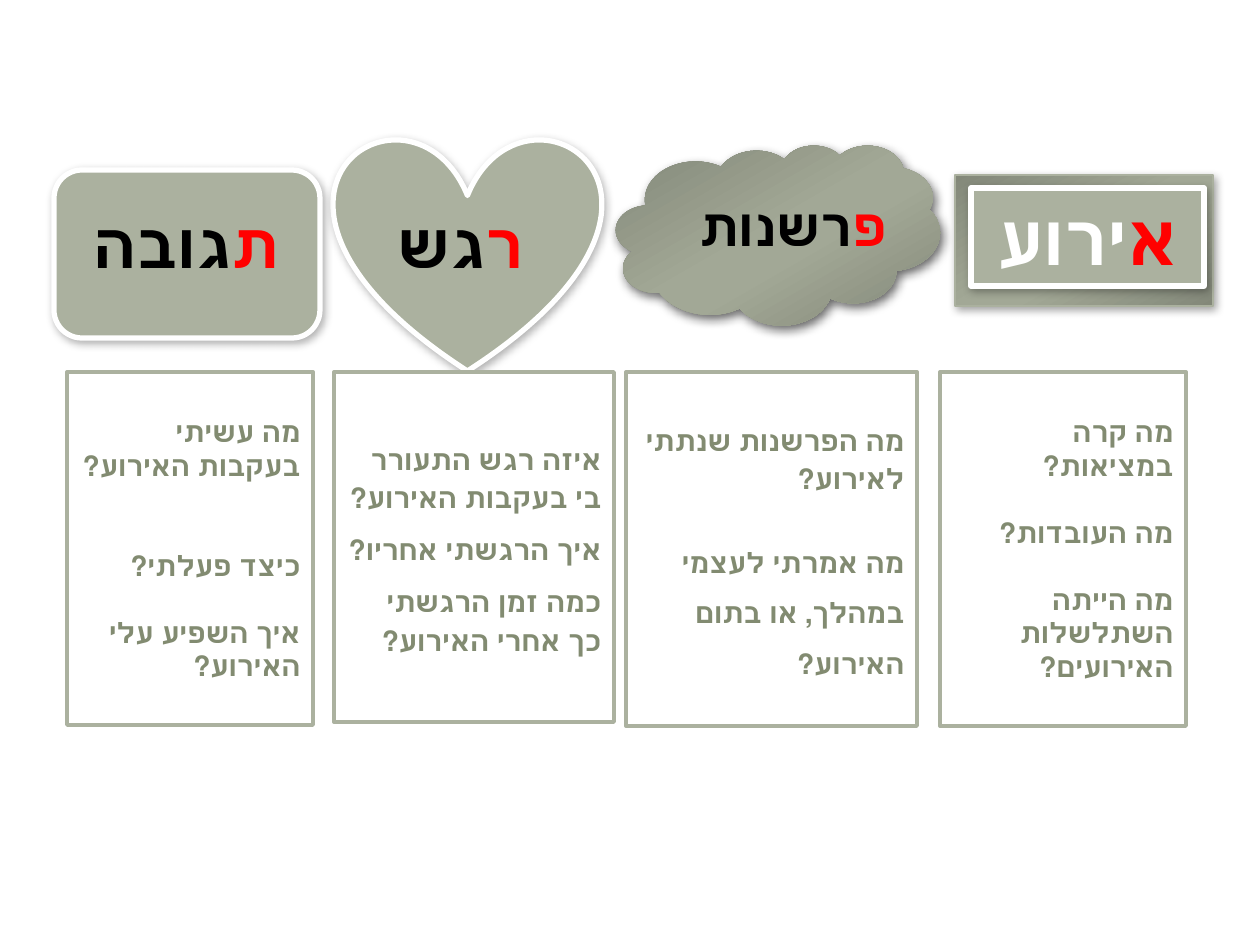
from lxml.etree import SubElement
from pptx import Presentation
from pptx.dml.color import RGBColor
from pptx.enum.shapes import MSO_SHAPE as SHAPE
from pptx.enum.text import MSO_ANCHOR as ANCHOR, PP_ALIGN as ALIGN
from pptx.oxml.ns import qn
from pptx.util import Pt

PX = 914400 // 126
SAGE = RGBColor(0xAB, 0xB1, 0x9F)
OLIVE = RGBColor(0x82, 0x8B, 0x71)
RED = RGBColor(0xFF, 0, 0)
BLACK = RGBColor(0, 0, 0)
WHITE = RGBColor(0xFF, 0xFF, 0xFF)
GRADIENT = [(0, "838879"), (48, "A2A896"), (58, "A2A896"), (100, "838879")]
SERIF, SANS, LABEL = "Times New Roman", "Calibri", "Karla"

# Header shapes: preset, box, fill (None = gradient), line, width, shadow
# where shadow is (opacity %, blur pt, distance pt)
HEADERS = [
    (SHAPE.RECTANGLE, (955, 175, 258, 131), None, SAGE, 0.79, (36, 5, 2)),
    (SHAPE.CLOUD, (616, 145, 324, 180), None, None, 0, (60, 6, 3)),
    (SHAPE.HEART, (334, 137, 267, 234), SAGE, WHITE, 3, (30, 5, 2)),
    (SHAPE.ROUNDED_RECTANGLE, (54, 170, 266, 168), SAGE, WHITE, 3, (30, 5, 2)),
    (SHAPE.RECTANGLE, (971, 188, 233, 98), SAGE, WHITE, 3, (30, 5, 2)),
]
# Header words: first letter, rest, box, size, font, colour of the rest
WORDS = [
    ("א", "ירוע", (971, 188, 233, 98), 40.5, LABEL, WHITE),
    ("פ", "רשנות", (669, 188, 248, 77), 30, SERIF, BLACK),
    ("ר", "גש", (349, 199, 222, 89), 36, SERIF, BLACK),
    ("ת", "גובה", (72, 199, 229, 89), 36, SERIF, BLACK),
]
# Question cards: left, width, height, font, (text, line spacing, space after)
CARDS = [
    (940, 246, 354, SERIF, [("מה קרה במציאות?", 1, 19),
                            ("מה העובדות?", 1, 19),
                            ("מה הייתה השתלשלות האירועים?", 1, 0)]),
    (626, 291, 354, SERIF, [("מה הפרשנות שנתתי לאירוע?", 1.15, 19),
                            ("מה אמרתי לעצמי במהלך, או בתום האירוע?", 1.5, 0)]),
    (334, 280, 350, SANS, [("איזה רגש התעורר בי בעקבות האירוע?", 1.15, 7.5),
                           ("איך הרגשתי אחריו?", 1.15, 7.5),
                           ("כמה זמן הרגשתי כך אחרי האירוע?", 1.15, 7.5)]),
    (67, 246, 353, SERIF, [("מה עשיתי בעקבות האירוע?", 1, 38),
                           ("כיצד פעלתי?", 1, 19),
                           ("איך השפיע עלי האירוע?", 1, 0)]),
]
CARD_TOP = 372


def emu(box):
    return [v * PX for v in box]


def add_color(parent, value, alpha=None):
    clr = SubElement(parent, qn("a:srgbClr"), val=value)
    if alpha is not None:
        SubElement(clr, qn("a:alpha"), val=str(alpha * 1000))


def add_gradient(sp):
    sp.fill.gradient()
    grad = sp.fill._xPr.find(qn("a:gradFill"))
    for child in list(grad):
        grad.remove(child)
    stops = SubElement(grad, qn("a:gsLst"))
    for pos, value in GRADIENT:
        add_color(SubElement(stops, qn("a:gs"), pos=str(pos * 1000)), value)
    SubElement(grad, qn("a:lin"), ang=str(60 * 60000), scaled="0")


def add_shape(preset, box, fill, line, width, shadow=None):
    sp = slide.shapes.add_shape(preset, *emu(box))
    if fill is None:
        add_gradient(sp)
    else:
        sp.fill.solid()
        sp.fill.fore_color.rgb = fill
    if line is None:
        sp.line.fill.background()
    else:
        sp.line.color.rgb = line
        sp.line.width = Pt(width)
    sp.shadow.inherit = False
    if shadow:
        alpha, blur, dist = shadow
        effects = sp._element.spPr.find(qn("a:effectLst"))
        outer = SubElement(effects, qn("a:outerShdw"), blurRad=str(Pt(blur)),
                           dist=str(Pt(dist)), dir=str(60 * 60000), rotWithShape="0")
        add_color(outer, "000000", alpha)
    return sp


def add_text(p, parts, size, font, align, spacing=None, after=0):
    """Fill a right-to-left paragraph with (text, colour) parts."""
    p.alignment = align
    p._p.get_or_add_pPr().set("rtl", "1")
    p.space_after = Pt(after)
    if spacing:
        p.line_spacing = spacing
    for text, color in parts:
        r = p.add_run()
        r.text = text
        r.font.size, r.font.name, r.font.bold = Pt(size), font, True
        r.font.color.rgb = color
        r._r.get_or_add_rPr().set("lang", "he-IL")


prs = Presentation()
prs.slide_width, prs.slide_height = 1260 * PX, 945 * PX
slide = prs.slides.add_slide(prs.slide_layouts[6])

# Header shapes
for header in HEADERS:
    add_shape(*header)

# Header words, first letter in red
for first, rest, box, size, font, color in WORDS:
    tf = slide.shapes.add_textbox(*emu(box)).text_frame
    tf.word_wrap = True
    add_text(tf.paragraphs[0], [(first, RED), (rest, color)], size, font, ALIGN.CENTER)

# Question cards
for left, width, height, font, questions in CARDS:
    sp = add_shape(SHAPE.RECTANGLE, (left, CARD_TOP, width, height), WHITE, SAGE, 2.22)
    tf = sp.text_frame
    tf.word_wrap = True
    tf.vertical_anchor = ANCHOR.MIDDLE
    for i, (text, spacing, after) in enumerate(questions):
        p = tf.add_paragraph() if i else tf.paragraphs[0]
        add_text(p, [(text, OLIVE)], 16, font, ALIGN.RIGHT, spacing, after)

prs.save("out.pptx")
